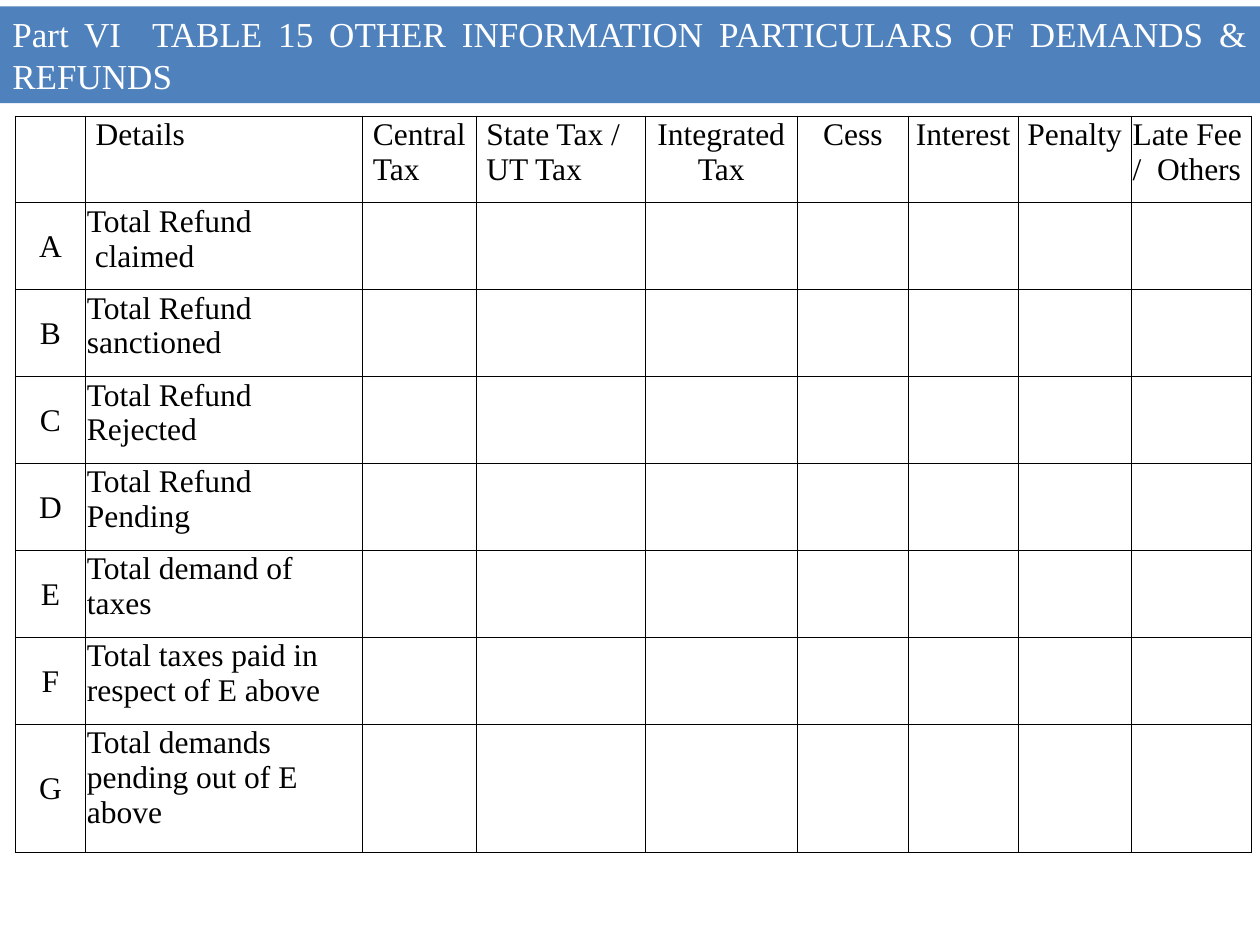
from lxml.etree import SubElement
from pptx import Presentation
from pptx.dml.color import RGBColor
from pptx.enum.shapes import MSO_SHAPE
from pptx.enum.text import MSO_ANCHOR, PP_ALIGN
from pptx.oxml.ns import qn
from pptx.util import Inches, Pt

TITLE = "Part VI  TABLE 15 OTHER INFORMATION PARTICULARS OF DEMANDS & REFUNDS"
HEADINGS = ["", "Details", "Central Tax", "State Tax / UT Tax", "Integrated Tax",
            "Cess", "Interest", "Penalty", "Late Fee\v/  Others"]
DETAILS = ["Total Refund\n claimed", "Total Refund\vsanctioned", "Total Refund Rejected",
           "Total Refund Pending", "Total demand of\vtaxes",
           "Total taxes paid in respect of E above", "Total demands pending out of E above"]
COLUMN_WIDTHS = [0.56, 2.2, 0.9, 1.34, 1.21, 0.88, 0.87, 0.9, 0.95]
ROW_HEIGHTS = [0.69] * len(DETAILS) + [1.02]
INDENTED_HEADINGS = range(1, 4)
CENTRED_HEADINGS = range(4, 8)
COLORS = {"band": "4F81BD", "title": "FFFFFF", "ink": "000000"}
FONT = "Times New Roman"


def style_text(frame, size, color, alignment):
    for paragraph in frame.paragraphs:
        paragraph.alignment = alignment
        for run in paragraph.runs:
            run.font.name = FONT
            run.font.size = Pt(size)
            run.font.color.rgb = RGBColor.from_string(COLORS[color])


def add_borders(cell):
    properties = cell._tc.get_or_add_tcPr()
    for position, side in enumerate(("lnL", "lnR", "lnT", "lnB")):
        line = SubElement(properties, qn(f"a:{side}"), w=str(Pt(0.5)))
        fill = SubElement(line, qn("a:solidFill"))
        SubElement(fill, qn("a:srgbClr"), val=COLORS["ink"])
        properties.insert(position, line)


def add_title(slide, width):
    band = slide.shapes.add_shape(MSO_SHAPE.RECTANGLE, 0, Inches(0.05), width, Inches(0.77))
    band.shadow.inherit = False
    band.fill.solid()
    band.fill.fore_color.rgb = RGBColor.from_string(COLORS["band"])
    band.line.fill.background()
    frame = band.text_frame
    frame.word_wrap = True
    frame.vertical_anchor = MSO_ANCHOR.MIDDLE
    frame.text = TITLE
    style_text(frame, 20, "title", PP_ALIGN.JUSTIFY)


def add_refund_table(slide):
    rows = [HEADINGS] + [
        [chr(ord("A") + index), detail] + [""] * (len(HEADINGS) - 2)
        for index, detail in enumerate(DETAILS)
    ]
    table = slide.shapes.add_table(
        len(rows), len(HEADINGS), Inches(0.12), Inches(0.92),
        Inches(sum(COLUMN_WIDTHS)), Inches(sum(ROW_HEIGHTS))).table
    table.first_row = table.horz_banding = False
    for column, width in zip(table.columns, COLUMN_WIDTHS):
        column.width = Inches(width)
    for row, height in zip(table.rows, ROW_HEIGHTS):
        row.height = Inches(height)

    for r, texts in enumerate(rows):
        for c, text in enumerate(texts):
            cell = table.cell(r, c)
            indented = r == 0 and c in INDENTED_HEADINGS
            centred = c == 0 or (r == 0 and c in CENTRED_HEADINGS)
            cell.margin_left = Inches(0.08 if indented else 0.01)
            cell.margin_right = cell.margin_top = Inches(0.01)
            cell.margin_bottom = 0
            cell.vertical_anchor = MSO_ANCHOR.MIDDLE if c == 0 else MSO_ANCHOR.TOP
            cell.fill.background()
            add_borders(cell)
            cell.text_frame.text = text
            style_text(cell.text_frame, 18, "ink",
                       PP_ALIGN.CENTER if centred else PP_ALIGN.LEFT)


def main():
    """Build the slide on demands and refunds."""
    presentation = Presentation()
    presentation.slide_width, presentation.slide_height = Inches(10), Inches(7.5)
    slide = presentation.slides.add_slide(presentation.slide_layouts[6])
    add_title(slide, presentation.slide_width)
    add_refund_table(slide)
    presentation.save("out.pptx")


if __name__ == "__main__":
    main()
